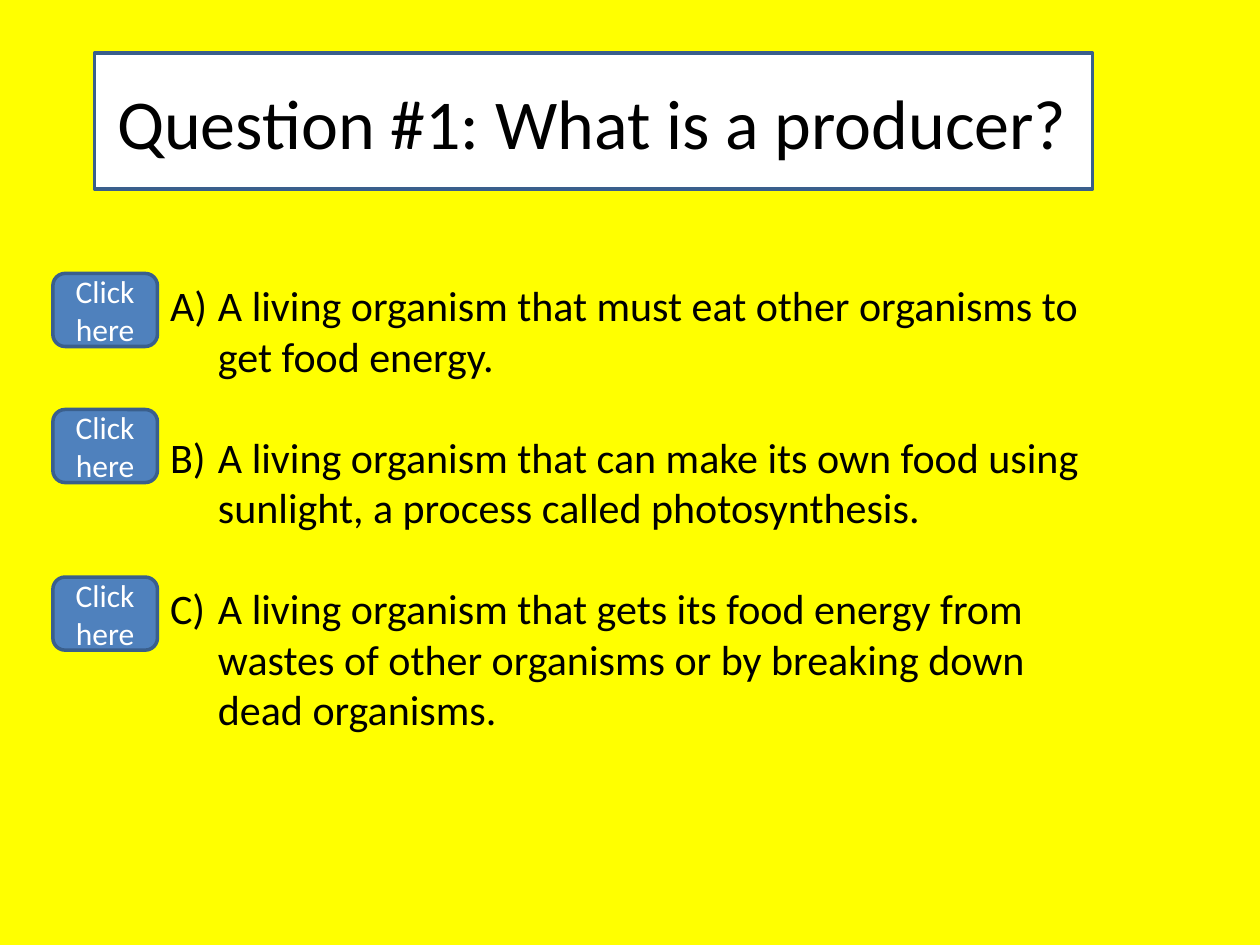
"""Builds a quiz slide with three lettered answers and a button for each."""
from lxml import etree
from pptx import Presentation
from pptx import util as u
from pptx.dml.color import RGBColor
from pptx.enum import shapes, text
from pptx.oxml.ns import qn

QUESTION = "Question #1: What is a producer?"
ANSWERS = [
    "A living organism that must eat other organisms to get food energy.",
    "A living organism that can make its own food using sunlight, a process called photosynthesis.",
    "A living organism that gets its food energy from wastes of other organisms or by breaking down dead organisms.",
]
BUTTON_LABEL = "Click here"
BUTTON_TOPS = [2.17, 3.25, 4.58]

THEME = {
    "font": "Calibri",
    "page": "FFFF00", "panel": "FFFFFF", "button": "4F81BD", "border": "3A5F8C",
    "ink": "000000", "button_ink": "FFFFFF",
    "title_size": 40, "answer_size": 24, "button_size": 18,
    "answer_gap": 29, "border_width": 2, "indent": 0.38,
}


def color(name):
    return RGBColor.from_string(THEME[name])


def place(shape, left, top, width, height):
    shape.left, shape.top = u.Inches(left), u.Inches(top)
    shape.width, shape.height = u.Inches(width), u.Inches(height)


def add_span(para, words, size, ink, align=text.PP_ALIGN.LEFT):
    para.alignment = align
    span = para.add_run()
    span.text = words
    span.font.name = THEME["font"]
    span.font.size = u.Pt(THEME[size])
    span.font.color.rgb = color(ink)


def add_box(page, kind, fill, left, top, width, height):
    box = page.shapes.add_shape(kind, *map(u.Inches, (left, top, width, height)))
    box.shadow.inherit = False
    box.fill.solid()
    box.fill.fore_color.rgb = color(fill)
    box.line.color.rgb = color("border")
    box.line.width = u.Pt(THEME["border_width"])
    return box


def prepare_frame(shape):
    frame = shape.text_frame
    frame.word_wrap = True
    frame.auto_size = text.MSO_AUTO_SIZE.SHAPE_TO_FIT_TEXT
    frame.vertical_anchor = text.MSO_ANCHOR.TOP
    return frame


def letter(para):
    props = para._p.get_or_add_pPr()
    props.set("marL", str(u.Inches(THEME["indent"])))
    props.set("indent", str(-u.Inches(THEME["indent"])))
    etree.SubElement(props, qn("a:buFont")).set("typeface", "+mj-lt")
    etree.SubElement(props, qn("a:buAutoNum")).set("type", "alphaUcParenR")


def main():
    deck = Presentation()
    deck.slide_width, deck.slide_height = u.Inches(10), u.Inches(7.5)
    page = deck.slides.add_slide(deck.slide_layouts[1])
    page.background.fill.solid()
    page.background.fill.fore_color.rgb = color("page")

    panel = add_box(page, shapes.MSO_SHAPE.RECTANGLE, "panel", 0.75, 0.42, 7.92, 1.08)
    page.shapes._spTree.insert(2, panel._element)

    title = page.shapes.title
    place(title, 0.83, 0.58, 8, 0.77)
    add_span(prepare_frame(title).paragraphs[0], QUESTION, "title_size", "ink")

    body = page.placeholders[1]
    place(body, 1.25, 2.17, 7.5, 3.74)
    frame = prepare_frame(body)
    for index, answer in enumerate(ANSWERS):
        para = frame.add_paragraph() if index else frame.paragraphs[0]
        para.space_before = u.Pt(THEME["answer_gap"] if index else 0)
        letter(para)
        add_span(para, answer, "answer_size", "ink")

    for top in BUTTON_TOPS:
        button = add_box(page, shapes.MSO_SHAPE.ROUNDED_RECTANGLE, "button", 0.42, top, 0.83, 0.58)
        button.text_frame.word_wrap = True
        button.text_frame.vertical_anchor = text.MSO_ANCHOR.MIDDLE
        add_span(button.text_frame.paragraphs[0], BUTTON_LABEL, "button_size", "button_ink",
                 text.PP_ALIGN.CENTER)

    deck.save("out.pptx")


if __name__ == "__main__":
    main()
